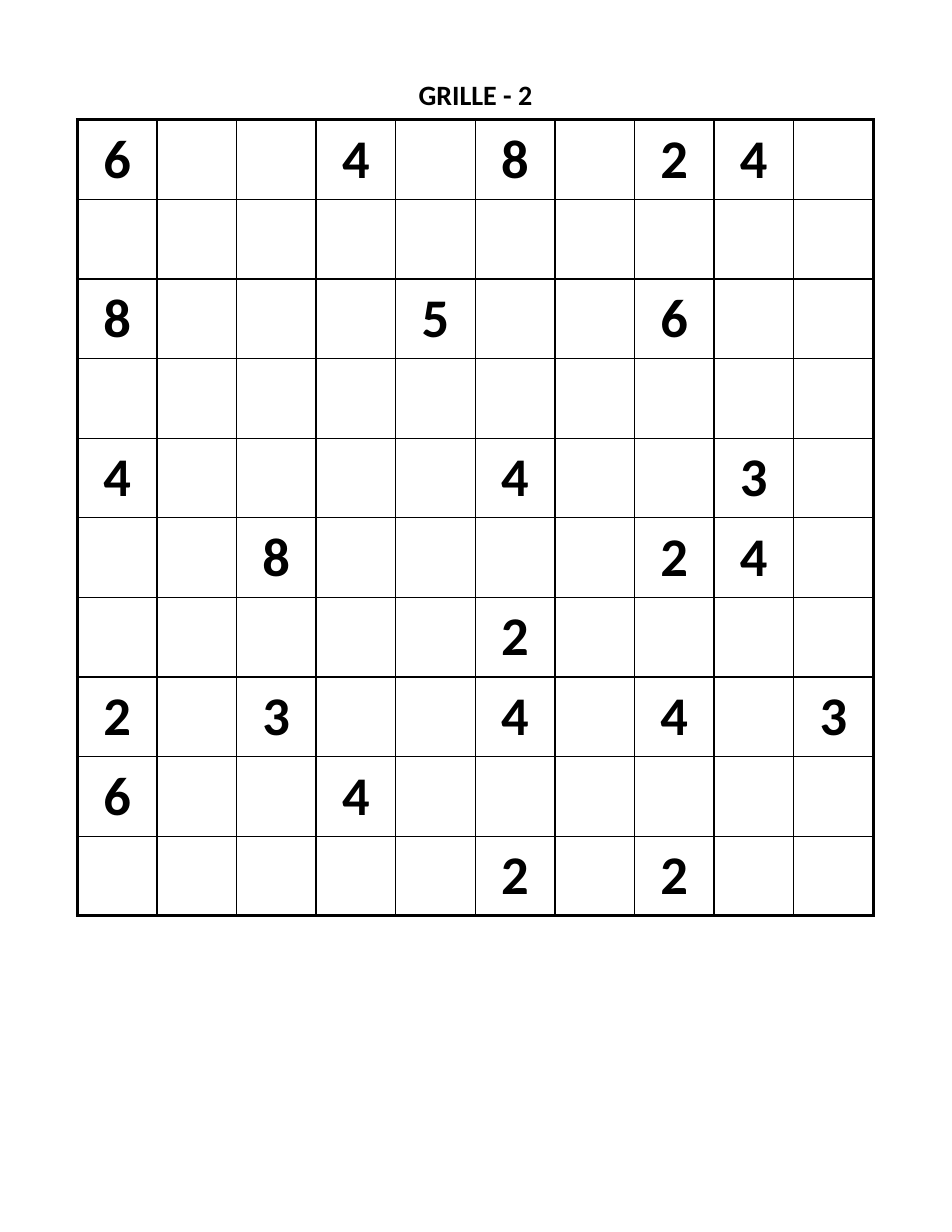
import lxml.etree
import pptx
import pptx.dml.color
import pptx.enum.text
import pptx.oxml.ns
import pptx.util
from pptx.util import Inches

BLACK = "000000"
WHITE = "FFFFFF"
GRID_LEFT = 0.69
GRID_TOP = 1.07
GRID_SIZE = 7.11
# One string per row; a dot is an empty cell.
CLUES = [
    "6..4.8.24.",
    "..........",
    "8...5..6..",
    "..........",
    "4....4..3.",
    "..8....24.",
    ".....2....",
    "2.3..4.4.3",
    "6..4......",
    ".....2.2..",
]
COUNT = len(CLUES)


def write_text(text_frame, text, size):
    """Write one centred, bold run in the first paragraph."""
    paragraph = text_frame.paragraphs[0]
    paragraph.alignment = pptx.enum.text.PP_ALIGN.CENTER
    run = paragraph.add_run()
    run.text = text
    run.font.name = "Calibri"
    run.font.size = pptx.util.Pt(size)
    run.font.bold = True
    run.font.color.rgb = pptx.dml.color.RGBColor.from_string(BLACK)


def add_border(cell, side, points):
    """Add a solid black border; side is lnL, lnR, lnT or lnB."""
    qn = pptx.oxml.ns.qn
    properties = cell._tc.get_or_add_tcPr()
    line = lxml.etree.SubElement(properties, qn(f"a:{side}"), w=str(pptx.util.Pt(points)))
    fill = lxml.etree.SubElement(line, qn("a:solidFill"))
    lxml.etree.SubElement(fill, qn("a:srgbClr"), val=BLACK)


presentation = pptx.Presentation()
presentation.slide_width = Inches(8.5)
presentation.slide_height = Inches(11)
slide = presentation.slides.add_slide(presentation.slide_layouts[6])

# Title
title = slide.shapes.add_textbox(
    Inches(GRID_LEFT), Inches(0.69), Inches(GRID_SIZE), Inches(0.3)
)
title_frame = title.text_frame
title_frame.word_wrap = True
title_frame.auto_size = pptx.enum.text.MSO_AUTO_SIZE.SHAPE_TO_FIT_TEXT
title_frame.margin_left = title_frame.margin_right = 0
title_frame.margin_top = title_frame.margin_bottom = 0
write_text(title_frame, "GRILLE - 2", 18)

# Puzzle grid
table = slide.shapes.add_table(
    COUNT, COUNT, Inches(GRID_LEFT), Inches(GRID_TOP), Inches(GRID_SIZE), Inches(GRID_SIZE)
).table
table.first_row = False
table.horz_banding = False
for column in table.columns:
    column.width = Inches(GRID_SIZE / COUNT)
for row in table.rows:
    row.height = Inches(GRID_SIZE / COUNT)

for row_index, clues in enumerate(CLUES):
    for column_index, clue in enumerate(clues):
        cell = table.cell(row_index, column_index)
        cell.vertical_anchor = pptx.enum.text.MSO_ANCHOR.MIDDLE
        cell.margin_left = cell.margin_right = 0
        cell.margin_top = cell.margin_bottom = 0
        outer_sides = {
            "lnL": column_index == 0,
            "lnR": column_index == COUNT - 1,
            "lnT": row_index == 0,
            "lnB": row_index == COUNT - 1,
        }
        for side, is_outer in outer_sides.items():
            add_border(cell, side, 2 if is_outer else 1)
        cell.fill.solid()
        cell.fill.fore_color.rgb = pptx.dml.color.RGBColor.from_string(WHITE)
        if clue != ".":
            write_text(cell.text_frame, clue, 35)

presentation.save("out.pptx")
